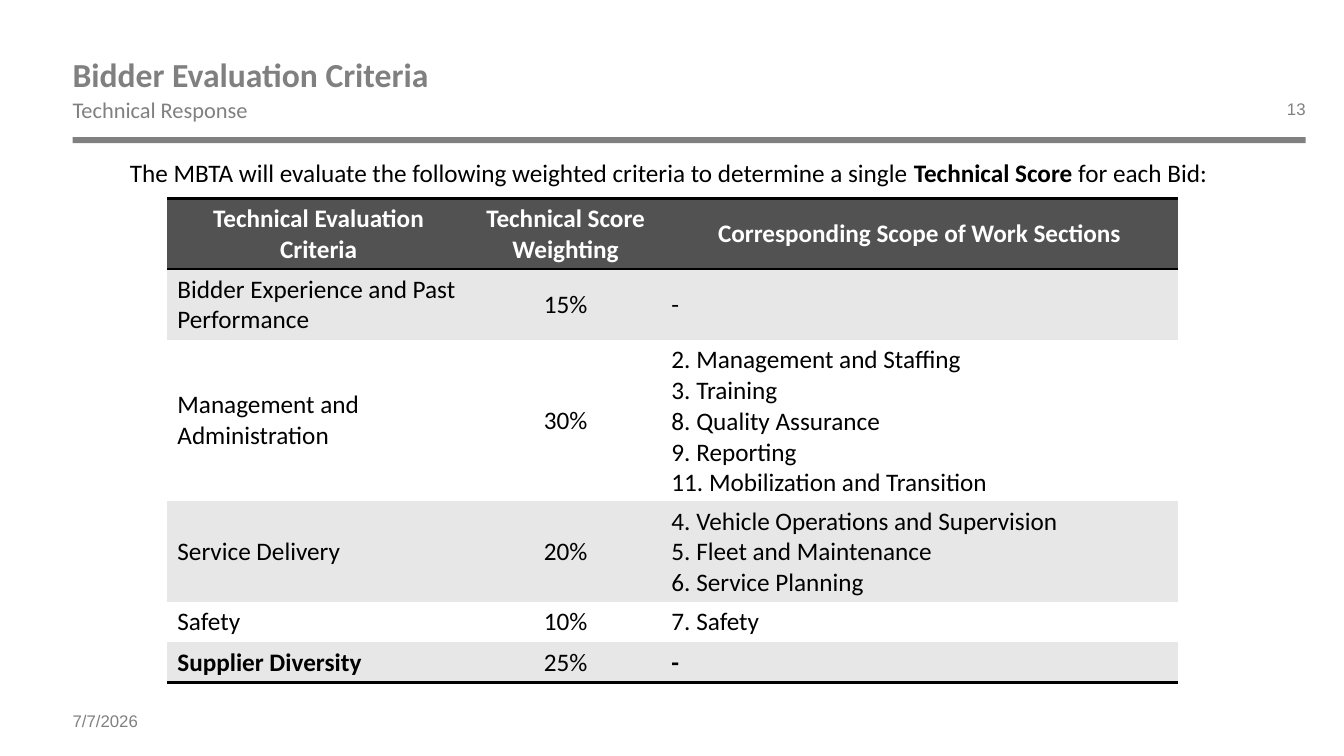
import pptx
import pptx.util
import pptx.dml.color
import pptx.enum.shapes
import pptx.enum.text
import pptx.oxml

TITLE = "Bidder Evaluation Criteria"
SUBTITLE = "Technical Response"
PAGE_NUMBER = "13"
DATE = "7/7/2026"
INTRO = [
    ("The MBTA will evaluate the following weighted criteria to determine a single ", False),
    ("Technical Score", True),
    (" for each Bid:", False),
]
HEADER = ("Technical Evaluation Criteria", "Technical Score Weighting",
          ["Corresponding Scope of Work Sections"])
# criterion, weighting, scope of work sections
CRITERIA = [
    ("Bidder Experience and Past Performance", "15%", ["-"]),
    ("Management and Administration", "30%",
     ["2. Management and Staffing", "3. Training", "8. Quality Assurance",
      "9. Reporting", "11. Mobilization and Transition"]),
    ("Service Delivery", "20%",
     ["4. Vehicle Operations and Supervision", "5. Fleet and Maintenance",
      "6. Service Planning"]),
    ("Safety", "10%", ["7. Safety"]),
    ("Supplier Diversity", "25%", ["-"]),
]


class Theme:
    gray, black, white = "808080", "000000", "FFFFFF"
    header, band = "525252", "E7E7E7"
    body, small_font = "Calibri", "Arial"
    title, text, subtitle, small = 24, 18, 16, 12
    rule = 2


WIDTH, HEIGHT = 13.33, 7.5
MARGIN, RIGHT = 0.72, 12.95
CONTENT = RIGHT - MARGIN
TABLE_LEFT, TABLE_TOP = 1.66, 1.97
COLUMNS = (3, 1.9, 5.12)
LINE, CELL_PADDING = 0.3, 0.1
WRAP_AT = 24  # characters that fit on one line of the first column
NO_STYLE = "{2D5ABB26-0587-4C30-8999-92F81FD0307C}"

Inches, Pt = pptx.util.Inches, pptx.util.Pt
Align, Anchor = pptx.enum.text.PP_ALIGN, pptx.enum.text.MSO_ANCHOR


def rgb(value):
    return pptx.dml.color.RGBColor.from_string(value)


def style(font, size, color, bold=False, name=Theme.body):
    font.size, font.name, font.bold = Pt(size), name, bold
    font.color.rgb = rgb(color)


def add_text(page, place, spans, size, color, name=Theme.body, anchor=Anchor.TOP,
             align=Align.LEFT, insets=(0.1, 0.05, 0.1, 0.05), spacing=None):
    """Add a one-paragraph box; spans are (text, bold) pairs."""
    box = page.shapes.add_textbox(*map(Inches, place))
    frame = box.text_frame
    frame.word_wrap, frame.vertical_anchor = True, anchor
    (frame.margin_left, frame.margin_top,
     frame.margin_right, frame.margin_bottom) = map(Inches, insets)
    para = frame.paragraphs[0]
    para.alignment, para.line_spacing = align, spacing
    for text, bold in spans:
        span = para.add_run()
        span.text = text
        style(span.font, size, color, bold, name)


def add_border(cell, side):
    """Draw a rule on a cell side: lnT for top, lnB for bottom."""
    line = pptx.oxml.parse_xml(
        f'<a:{side} xmlns:a="http://schemas.openxmlformats.org/drawingml/2006/main" '
        f'w="{Pt(Theme.rule)}"><a:solidFill><a:srgbClr val="{Theme.black}"/>'
        f'</a:solidFill></a:{side}>')
    cell._tc.get_or_add_tcPr().append(line)


def row_height(row):
    lines = max(len(row[2]), 2 if len(row[0]) > WRAP_AT else 1)
    return lines * LINE + CELL_PADDING


def fill_cell(cell, content, row, column, last):
    heading = row == 0
    if heading:
        add_border(cell, "lnT")
    if heading or row == last:
        add_border(cell, "lnB")
    cell.fill.solid()
    cell.fill.fore_color.rgb = rgb(
        Theme.header if heading else Theme.band if row % 2 else Theme.white)
    cell.vertical_anchor = Anchor.MIDDLE
    cell.text_frame.text = content if isinstance(content, str) else "\n".join(content)
    bold = heading or (row == last and column != 1)
    for para in cell.text_frame.paragraphs:
        para.alignment = Align.CENTER if heading or column == 1 else Align.LEFT
        for span in para.runs:
            style(span.font, Theme.text, Theme.white if heading else Theme.black, bold)


def add_criteria_table(page):
    rows = [HEADER] + CRITERIA
    heights = [row_height(row) for row in rows]
    frame = page.shapes.add_table(
        len(rows), len(COLUMNS), Inches(TABLE_LEFT), Inches(TABLE_TOP),
        Inches(sum(COLUMNS)), Inches(sum(heights)))
    table = frame.table
    table._tbl.tblPr[0].text = NO_STYLE
    for column, width in zip(table.columns, COLUMNS):
        column.width = Inches(width)
    for index, (row, height) in enumerate(zip(rows, heights)):
        table.rows[index].height = Inches(height)
        for column, content in enumerate(row):
            fill_cell(table.cell(index, column), content, index, column, len(rows) - 1)


def main():
    deck = pptx.Presentation()
    deck.slide_width, deck.slide_height = Inches(WIDTH), Inches(HEIGHT)
    page = deck.slides.add_slide(deck.slide_layouts[6])

    bar = page.shapes.add_shape(
        pptx.enum.shapes.MSO_SHAPE.RECTANGLE,
        *map(Inches, (MARGIN, 1.36, CONTENT, 0.06)))
    bar.shadow.inherit = False
    bar.fill.solid()
    bar.fill.fore_color.rgb = rgb(Theme.gray)
    bar.line.fill.background()

    add_text(page, (MARGIN, 0.4, CONTENT, 0.54), [(TITLE, True)], Theme.title, Theme.gray,
             anchor=Anchor.BOTTOM, insets=(0, 0, 0.1, 0), spacing=0.9)
    add_text(page, (RIGHT - 3.53, 0.98, 3.53, 0.39), [(PAGE_NUMBER, False)], Theme.small,
             Theme.gray, Theme.small_font, align=Align.RIGHT, insets=(0.1, 0, 0, 0.05))
    add_text(page, (MARGIN, 0.98, 8.61, 0.38), [(SUBTITLE, False)], Theme.subtitle,
             Theme.gray, insets=(0, 0, 0.1, 0.05), spacing=0.9)
    add_text(page, (MARGIN, 6.95, 3, 0.4), [(DATE, False)], Theme.small, Theme.gray,
             Theme.small_font, anchor=Anchor.MIDDLE, insets=(0, 0.05, 0, 0.05))
    add_text(page, (1.19, 1.51, 10.96, 0.4), INTRO, Theme.text, Theme.black)
    add_criteria_table(page)
    deck.save("out.pptx")


if __name__ == "__main__":
    main()
